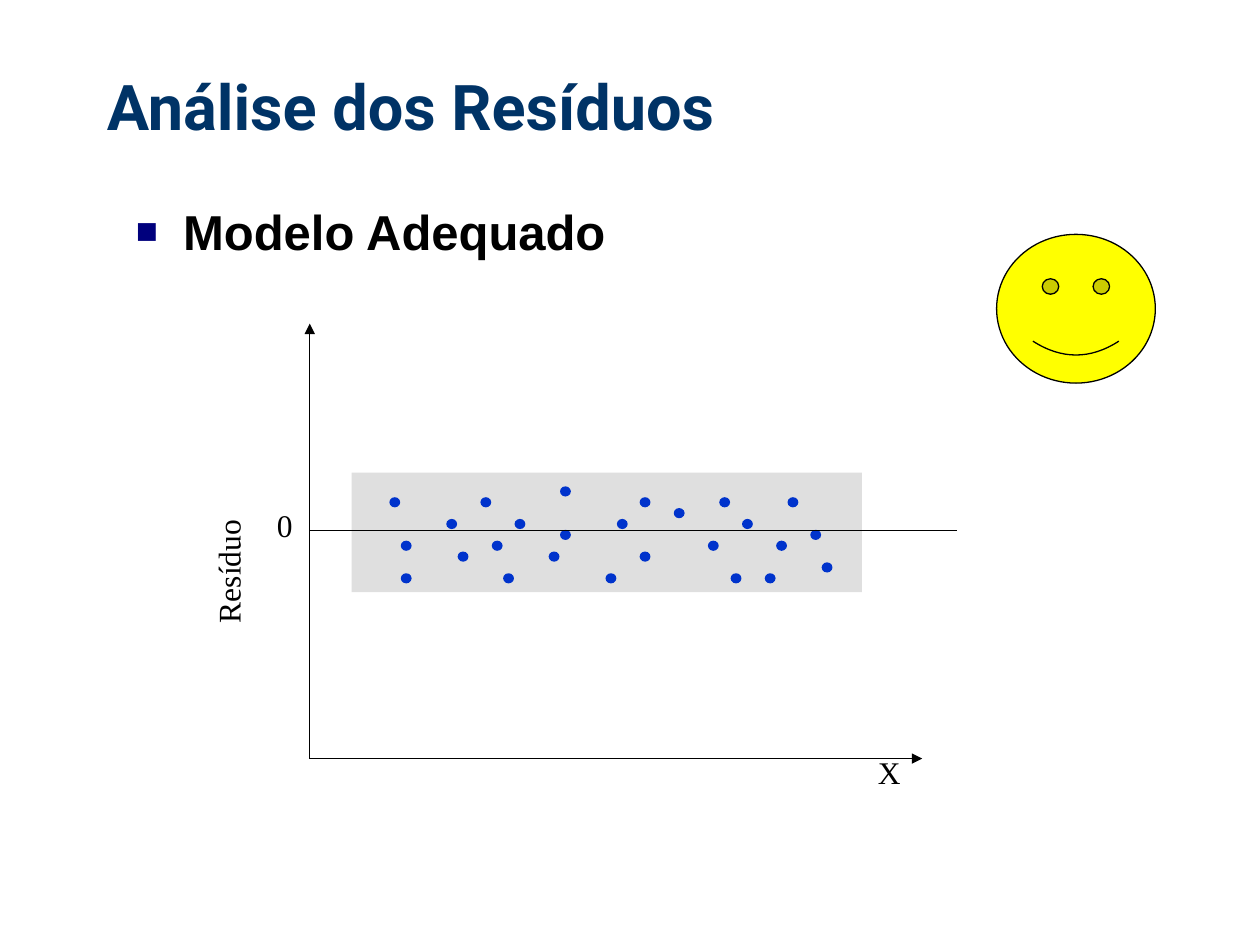
from dataclasses import dataclass

from lxml import etree
from pptx import Presentation
from pptx import util as u
from pptx.dml.color import RGBColor
from pptx.enum import shapes, text
from pptx.oxml.ns import qn


@dataclass(frozen=True)
class Theme:
    title: str = "003366"
    ink: str = "000000"
    bullet: str = "00007D"
    band: str = "C0C0C0"
    dot: str = "0033CC"
    smiley: str = "FFFF00"
    title_font: str = "Roboto"
    body_font: str = "Arial"
    label_font: str = "Times New Roman"
    title_size: float = 36
    body_size: float = 28
    label_size: float = 18
    line_width: float = 0.75


THEME = Theme()

# Plot geometry in points
ORIGIN_X, ORIGIN_Y = 177, 433.5
ZERO_Y = 303.3
DOT_LEFT, DOT_TOP = 222.5, 277.9
DOT_STEP_X, DOT_STEP_Y = 6.5, 6.21
DOT_WIDTH, DOT_HEIGHT = 6.2, 5.8

# Grid columns of the residuals, one list for each grid row from the top
RESIDUAL_ROWS = [
    [15],
    [0, 8, 22, 29, 35],
    [25],
    [5, 11, 20, 31],
    [15, 37],
    [1, 9, 28, 34],
    [6, 14, 22],
    [38],
    [1, 10, 19, 30, 33],
]


def points(*values):
    return [u.Pt(value) for value in values]


def add_text(slide, content, box, *, font, size, color, bold=False,
             wrap=True, anchor=text.MSO_ANCHOR.TOP, rotation=0):
    shape = slide.shapes.add_textbox(*points(*box))
    shape.rotation = rotation
    frame = shape.text_frame
    frame.word_wrap = wrap
    frame.vertical_anchor = anchor
    paragraph = frame.paragraphs[0]
    run = paragraph.add_run()
    run.text = content
    run.font.name = font
    run.font.size = u.Pt(size)
    run.font.bold = bold
    run.font.color.rgb = RGBColor.from_string(color)
    return paragraph


def add_bullet(paragraph, character, color, percent, indent):
    properties = paragraph._p.get_or_add_pPr()
    properties.set("marL", str(u.Pt(indent)))
    properties.set("indent", str(-u.Pt(indent)))
    bullet_color = etree.SubElement(properties, qn("a:buClr"))
    etree.SubElement(bullet_color, qn("a:srgbClr"), val=color)
    etree.SubElement(properties, qn("a:buSzPct"), val=str(percent * 1000))
    etree.SubElement(properties, qn("a:buFont"), typeface=THEME.body_font)
    etree.SubElement(properties, qn("a:buChar"), char=character)


def add_filled_shape(slide, kind, box, fill, *, line=None, opacity=100):
    shape = slide.shapes.add_shape(kind, *points(*box))
    shape.shadow.inherit = False
    shape.fill.solid()
    shape.fill.fore_color.rgb = RGBColor.from_string(fill)
    if opacity < 100:
        color = shape._element.spPr.find(".//" + qn("a:srgbClr"))
        etree.SubElement(color, qn("a:alpha"), val=str(opacity * 1000))
    if line:
        shape.line.color.rgb = RGBColor.from_string(line)
        shape.line.width = u.Pt(THEME.line_width)
    else:
        shape.line.fill.background()
    return shape


def add_line(slide, start, end, arrow=False):
    connector = slide.shapes.add_connector(
        shapes.MSO_CONNECTOR.STRAIGHT, *points(*start, *end))
    connector.line.color.rgb = RGBColor.from_string(THEME.ink)
    connector.line.width = u.Pt(THEME.line_width)
    if arrow:
        etree.SubElement(connector.line._get_or_add_ln(), qn("a:tailEnd"),
                         type="triangle")
    etree.SubElement(connector._element.spPr, qn("a:effectLst"))


def add_residual_plot(slide):
    # Shaded band and residuals
    add_filled_shape(slide, shapes.MSO_SHAPE.RECTANGLE,
                     (200.9, 270, 291.6, 68.4), THEME.band, opacity=50)
    for row, columns in enumerate(RESIDUAL_ROWS):
        for column in columns:
            box = (DOT_LEFT + column * DOT_STEP_X, DOT_TOP + row * DOT_STEP_Y,
                   DOT_WIDTH, DOT_HEIGHT)
            add_filled_shape(slide, shapes.MSO_SHAPE.FLOWCHART_CONNECTOR,
                             box, THEME.dot)

    # Zero line and axes
    origin = (ORIGIN_X, ORIGIN_Y)
    add_line(slide, (ORIGIN_X, ZERO_Y), (547, ZERO_Y))
    add_line(slide, origin, (ORIGIN_X, 185), arrow=True)
    add_line(slide, origin, (527, ORIGIN_Y), arrow=True)

    # Axis labels
    labels = [
        ("0", (151.2, 285.8, 23.8, 28.8), 0),
        ("Resíduo", (93.6, 312, 73.4, 28.8), 270),
        ("X", (494.6, 427, 27.4, 28.8), 0),
    ]
    for content, box, rotation in labels:
        add_text(slide, content, box, font=THEME.label_font,
                 size=THEME.label_size, color=THEME.ink, wrap=False,
                 rotation=rotation)


def main():
    presentation = Presentation()
    presentation.slide_width, presentation.slide_height = points(720, 540)
    slide = presentation.slides.add_slide(presentation.slide_layouts[6])

    # Title and topic
    add_text(slide, "Análise dos Resíduos", (54, 30, 642, 60),
             font=THEME.title_font, size=THEME.title_size, color=THEME.title,
             bold=True, anchor=text.MSO_ANCHOR.MIDDLE)
    topic = add_text(slide, "Modelo Adequado", (70.6, 111.6, 622.8, 374.4),
                     font=THEME.body_font, size=THEME.body_size,
                     color=THEME.ink, bold=True)
    add_bullet(topic, "■", THEME.bullet, 75, 27)

    add_residual_plot(slide)

    # Verdict
    smiley = add_filled_shape(slide, shapes.MSO_SHAPE.SMILEY_FACE,
                              (569.5, 133.9, 90.7, 85), THEME.smiley,
                              line=THEME.ink)
    smiley.adjustments[0] = 0.05

    presentation.save("out.pptx")


if __name__ == "__main__":
    main()
